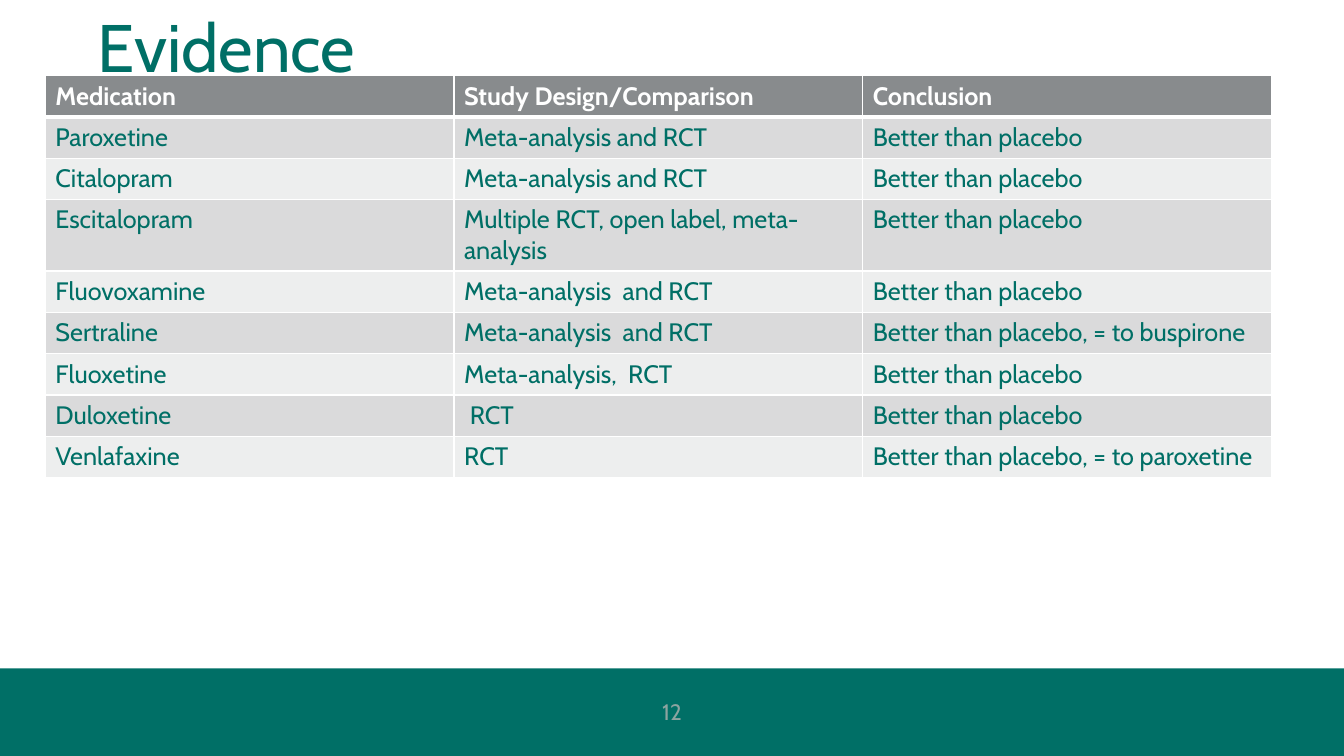
from dataclasses import dataclass

from lxml.etree import SubElement
from pptx import Presentation
from pptx.dml.color import RGBColor
from pptx.enum.shapes import MSO_SHAPE
from pptx.enum.text import MSO_ANCHOR, MSO_AUTO_SIZE, PP_ALIGN
from pptx.oxml.ns import qn
from pptx.util import Inches, Pt


@dataclass(frozen=True)
class Theme:
    font: str = "Cabin"
    green: RGBColor = RGBColor(0x00, 0x6F, 0x66)
    pale_green: RGBColor = RGBColor(0x8C, 0xA4, 0xA0)
    white: RGBColor = RGBColor(0xFF, 0xFF, 0xFF)
    header: RGBColor = RGBColor(0x88, 0x8B, 0x8D)
    bands: tuple = (RGBColor(0xDA, 0xDA, 0xDB), RGBColor(0xED, 0xEE, 0xEE))
    title_size: int = 48
    table_size: int = 18
    number_size: int = 16


THEME = Theme()
ROW_HEIGHT = 0.41
WRAPPED_ROW_HEIGHT = 0.71
WRAPPED_ROW = 3
EVIDENCE = [
    ("Medication", "Study Design/Comparison", "Conclusion"),
    ("Paroxetine", "Meta-analysis and RCT", "Better than placebo"),
    ("Citalopram", "Meta-analysis and RCT", "Better than placebo"),
    ("Escitalopram", "Multiple RCT, open label, meta-analysis", "Better than placebo"),
    ("Fluovoxamine", "Meta-analysis  and RCT", "Better than placebo"),
    ("Sertraline", "Meta-analysis  and RCT", "Better than placebo, = to buspirone"),
    ("Fluoxetine", "Meta-analysis,  RCT", "Better than placebo"),
    ("Duloxetine", " RCT", "Better than placebo"),
    ("Venlafaxine", "RCT", "Better than placebo, = to paroxetine"),
]


def set_attributes(target, values):
    for name, value in values.items():
        setattr(target, name, value)


def write_text(text_frame, text, size, color, bold=False, alignment=PP_ALIGN.LEFT):
    text_frame.text = text
    paragraph = text_frame.paragraphs[0]
    set_attributes(paragraph, {"alignment": alignment, "space_before": Pt(0)})
    font = paragraph.runs[0].font
    set_attributes(font, {"name": THEME.font, "size": Pt(size), "bold": bold})
    font.color.rgb = color


def add_title(slide, left, top, width, height):
    title = slide.shapes.title
    set_attributes(title, {"left": Inches(left), "top": Inches(top),
                           "width": Inches(width), "height": Inches(height)})
    set_attributes(title.text_frame, {"vertical_anchor": MSO_ANCHOR.TOP,
                                      "word_wrap": True,
                                      "auto_size": MSO_AUTO_SIZE.NONE})
    write_text(title.text_frame, "Evidence", THEME.title_size, THEME.green)


def set_cell_borders(cell, bottom_width):
    """Draw white borders; must run before the cell is filled."""
    properties = cell._tc.get_or_add_tcPr()
    for side, width in {"lnL": 1, "lnR": 1, "lnT": 1, "lnB": bottom_width}.items():
        line = SubElement(properties, qn(f"a:{side}"), w=str(Pt(width)))
        fill = SubElement(line, qn("a:solidFill"))
        SubElement(fill, qn("a:srgbClr"), val=str(THEME.white))


def add_evidence_table(slide, left, top, width):
    heights = [WRAPPED_ROW_HEIGHT if index == WRAPPED_ROW else ROW_HEIGHT
               for index in range(len(EVIDENCE))]
    table = slide.shapes.add_table(
        len(EVIDENCE), len(EVIDENCE[0]), Inches(left), Inches(top),
        Inches(width), Inches(sum(heights))).table
    for row_index, texts in enumerate(EVIDENCE):
        table.rows[row_index].height = Inches(heights[row_index])
        is_header = row_index == 0
        fill_color = THEME.header if is_header else THEME.bands[(row_index - 1) % 2]
        for column_index, text in enumerate(texts):
            cell = table.cell(row_index, column_index)
            set_cell_borders(cell, bottom_width=3 if is_header else 1)
            cell.fill.solid()
            cell.fill.fore_color.rgb = fill_color
            write_text(cell.text_frame, text, THEME.table_size,
                       THEME.white if is_header else THEME.green, bold=is_header)


def add_footer(slide, left, top, width, height):
    """Add the green band with the slide number at its centre."""
    band = slide.shapes.add_shape(MSO_SHAPE.RECTANGLE, Inches(left), Inches(top),
                                  Inches(width), Inches(height))
    band.shadow.inherit = False
    band.fill.solid()
    band.fill.fore_color.rgb = THEME.green
    band.line.fill.background()

    number_width, number_height = 3, 0.4
    number = slide.shapes.add_textbox(
        Inches(left + (width - number_width) / 2),
        Inches(top + (height - number_height) / 2 - 0.02),
        Inches(number_width), Inches(number_height))
    set_attributes(number.text_frame, {"word_wrap": True,
                                       "vertical_anchor": MSO_ANCHOR.MIDDLE})
    write_text(number.text_frame, "12", THEME.number_size, THEME.pale_green,
               alignment=PP_ALIGN.CENTER)


def add_evidence_slide(presentation):
    slide = presentation.slides.add_slide(presentation.slide_layouts[5])
    add_footer(slide, 0, 6.63, 13.33, 0.89)
    add_title(slide, 0.87, 0, 12.16, 0.88)
    add_evidence_table(slide, 0.45, 0.75, 12.16)


def main():
    presentation = Presentation()
    set_attributes(presentation, {"slide_width": Inches(13.33),
                                  "slide_height": Inches(7.5)})
    add_evidence_slide(presentation)
    presentation.save("out.pptx")


if __name__ == "__main__":
    main()
